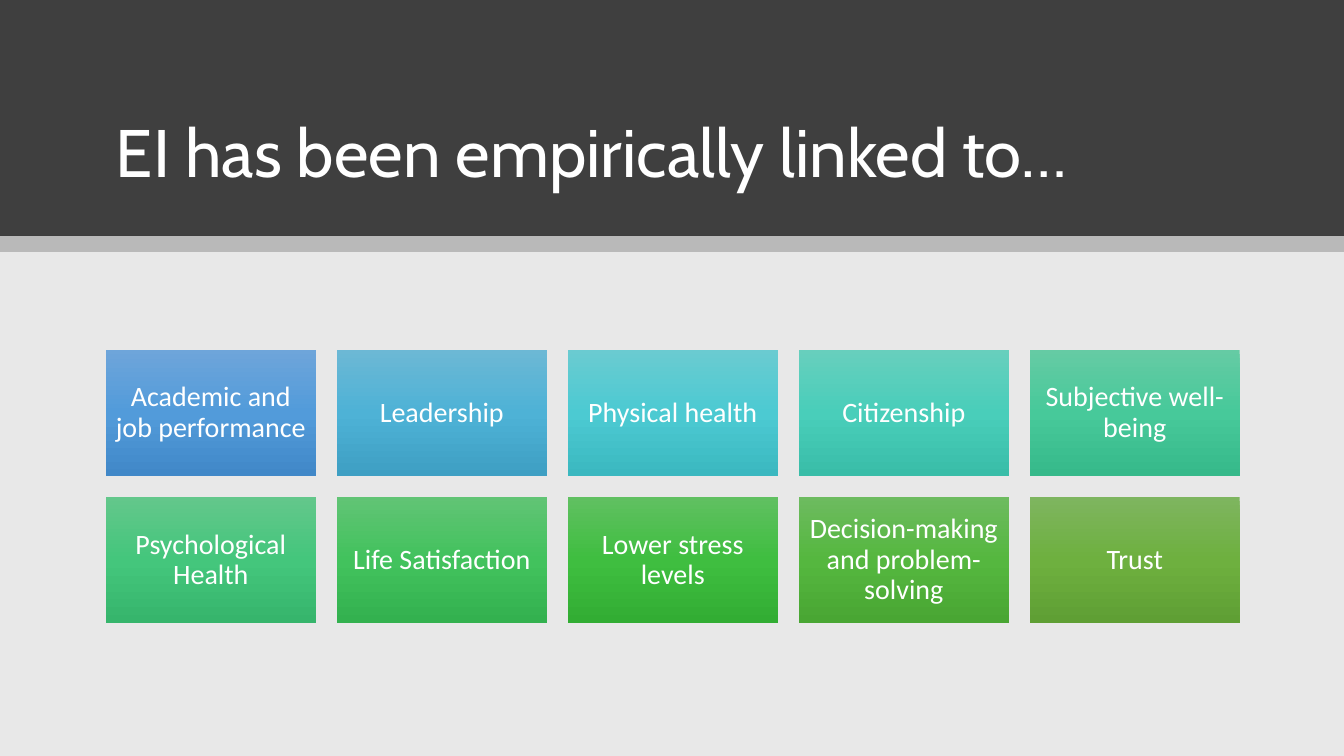
from copy import deepcopy
from dataclasses import dataclass

from lxml.etree import SubElement
from pptx import Presentation
from pptx.dml.color import RGBColor as Color
from pptx.enum.shapes import MSO_SHAPE as Kind
from pptx.enum.text import MSO_ANCHOR as Anchor, MSO_AUTO_SIZE as Auto, PP_ALIGN as Align
from pptx.oxml.ns import qn
from pptx.shapes.autoshape import Shape
from pptx.slide import Slide
from pptx.text.text import TextFrame
from pptx.util import Pt

WIDE, HIGH = 960, 540
HEAD, STRIP = 168.5, 11.5
COLS = 5
LEFT, TOP = 75.6, 250
TILE_W, TILE_H, GAP = 150, 90, 15


@dataclass
class Tile:
    label: str
    shades: tuple[str, str, str]


TILES = [
    Tile("Academic and job performance", ("6EA5DA", "529BDA", "4188C8")),
    Tile("Leadership", ("6CB8D5", "4EB2D6", "3E9FC3")),
    Tile("Physical health", ("6ACBD1", "4CCAD2", "3BB8C0")),
    Tile("Citizenship", ("67CFBD", "49CEBA", "39BDA8")),
    Tile("Subjective well-being", ("65CBA4", "47C99A", "36B98A")),
    Tile("Psychological Health", ("63C78B", "44C67C", "36B56C")),
    Tile("Life Satisfaction", ("61C475", "42C25D", "33B14F")),
    Tile("Lower stress levels", ("60C061", "3FBE40", "32AD33")),
    Tile("Decision-making and problem-solving", ("6DBB5F", "55B73F", "49A633")),
    Tile("Trust", ("7EB55F", "6EB03F", "5F9F34")),
]


def tint(item, code: str) -> None:
    """Colour a solid fill, or a font through its fill."""
    item.solid()
    item.fore_color.rgb = Color.from_string(code)


def apply(item, values: dict) -> None:
    for name, value in values.items():
        setattr(item, name, value)


def write(frame: TextFrame, text: str, face: str, size: float,
          align: Align, anchor: Anchor, pad_x: float, pad_y: float) -> None:
    frame.text = text
    apply(frame, {
        "word_wrap": True, "auto_size": Auto.NONE, "vertical_anchor": anchor,
        "margin_left": Pt(pad_x), "margin_right": Pt(pad_x),
        "margin_top": Pt(pad_y), "margin_bottom": Pt(pad_y),
    })
    para = frame.paragraphs[0]
    apply(para, {"alignment": align, "line_spacing": 0.9, "space_before": Pt(0)})
    font = para.runs[0].font
    apply(font, {"name": face, "size": Pt(size)})
    tint(font.fill, "FFFFFF")


def box(slide: Slide, x: float, y: float, w: float, h: float) -> Shape:
    shape = slide.shapes.add_shape(Kind.RECTANGLE, Pt(x), Pt(y), Pt(w), Pt(h))
    shape.shadow.inherit = False
    shape.line.fill.background()
    return shape


def blend(shape: Shape, shades: tuple[str, str, str]) -> None:
    """Fill from top to bottom with three evenly spaced shades."""
    fill = shape.fill
    fill.gradient()
    fill.gradient_angle = 270
    stops = shape._element.spPr.find(qn("a:gradFill")).find(qn("a:gsLst"))
    stops.append(deepcopy(stops[-1]))
    for i, (stop, code) in enumerate(zip(fill.gradient_stops, shades)):
        stop.position = i / 2
        stop.color.rgb = Color.from_string(code)


def draw(slide: Slide, tile: Tile, index: int) -> None:
    row, col = divmod(index, COLS)
    shape = box(slide, LEFT + col * (TILE_W + GAP), TOP + row * (TILE_H + GAP),
                TILE_W, TILE_H)
    blend(shape, tile.shades)
    write(shape.text_frame, tile.label, "Calibri", 20, Align.CENTER, Anchor.MIDDLE, 6, 6)


def main() -> None:
    deck = Presentation()
    apply(deck, {"slide_width": Pt(WIDE), "slide_height": Pt(HIGH)})
    slide = deck.slides.add_slide(deck.slide_layouts[5])

    # Background and header bands
    tint(slide.background.fill, "E8E8E8")
    tint(box(slide, 0, 0, WIDE, HEAD).fill, "3F3F3F")
    strip = box(slide, 0, HEAD, WIDE, STRIP)
    tint(strip.fill, "000000")
    shade = strip.fill._xPr.find(qn("a:solidFill"))[0]
    SubElement(shade, qn("a:alpha"), val="20000")

    # Title, brought in front of the header
    title = slide.shapes.title
    apply(title, {"left": Pt(LEFT), "top": Pt(34), "width": Pt(809), "height": Pt(107)})
    write(title.text_frame, "EI has been empirically linked to…", "Cabin", 48,
          Align.LEFT, Anchor.BOTTOM, 7.2, 3.6)
    slide.shapes._spTree.append(title._element)

    # Grid of linked outcomes
    for index, tile in enumerate(TILES):
        draw(slide, tile, index)

    deck.save("out.pptx")


if __name__ == "__main__":
    main()
